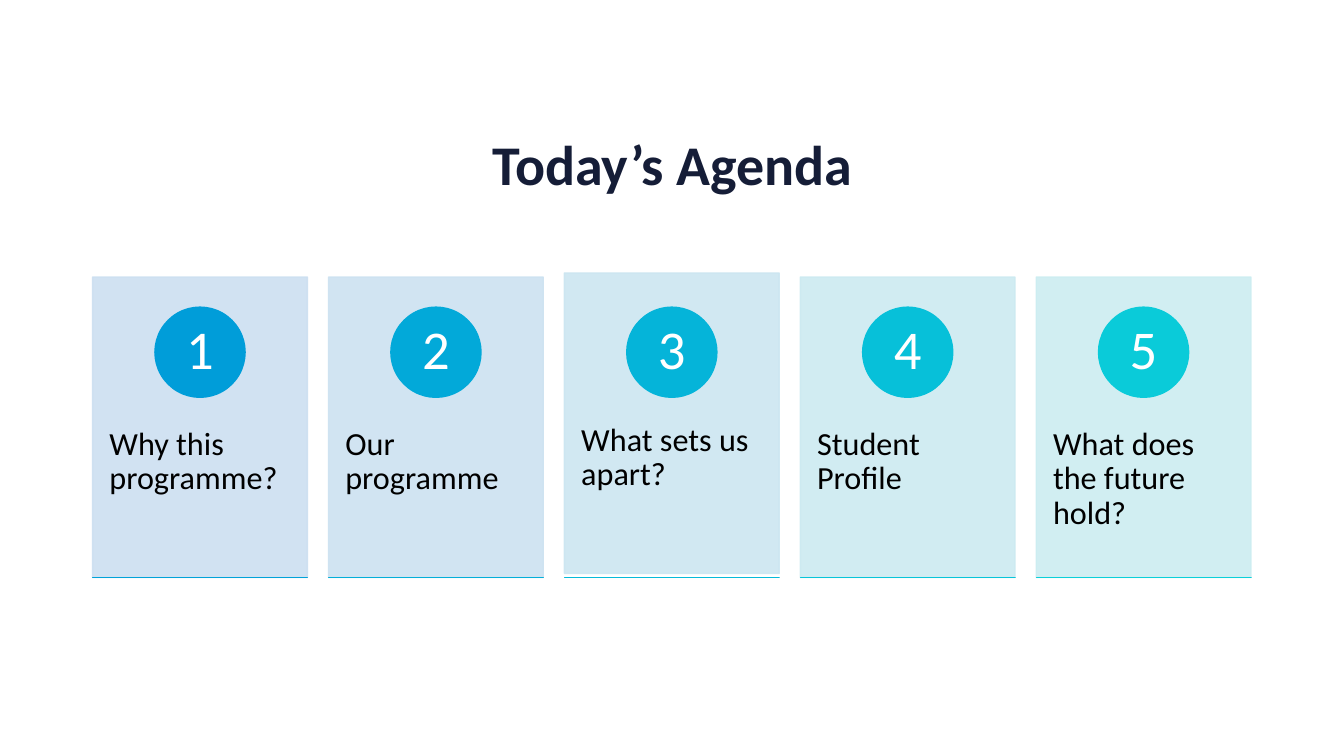
import pptx
import pptx.util
import pptx.dml.color
import pptx.enum.shapes
import pptx.enum.text
import pptx.oxml
from pptx.oxml import ns

Pt = pptx.util.Pt
KIND = pptx.enum.shapes.MSO_SHAPE
ALIGN = pptx.enum.text.PP_ALIGN
ANCHOR = pptx.enum.text.MSO_ANCHOR

HEX = {
    "title": "151D37", "text": "000000", "digit": "FFFFFF",
    "cards": ["CCDFF1", "CCE2F1", "CCE6F1", "CCEAF1", "CCEDF1"],
    "discs": ["009DD9", "02A9D9", "05B4D9", "07C0D9", "0ACBD9"],
    "rules": ["01A3D9", "04AFD9", "06BAD9", "08C5D9", "0BD0D9"],
}
TOPICS = ["Why this programme?", "Our programme", "What sets us apart?",
          "Student Profile", "What does the future hold?"]
LIFTS = [0, 0, 2.9, 0, 0]
GAP = 15.1


def paint(fill, color, alpha=100):
    fill.solid()
    fill.fore_color.rgb = pptx.dml.color.RGBColor.from_string(color)
    if alpha < 100:
        tint = fill._xPr.find(".//" + ns.qn("a:srgbClr"))
        node = pptx.oxml.parse_xml(f'<a:alpha {ns.nsdecls("a")} val="{alpha * 1000}"/>')
        tint.append(node)


def block(slide, kind, box, color, alpha=100):
    """Add a shape whose fill and outline share one colour."""
    shape = slide.shapes.add_shape(kind, *map(Pt, box))
    shape.shadow.inherit = False
    paint(shape.fill, color, alpha)
    paint(shape.line.fill, color, alpha)
    shape.line.width = Pt(1)
    return shape


def write(shape, text, size, color, align, anchor, pads, bold=False, space=0.9):
    """Fill a shape with one run; pads are left, top, right, bottom."""
    frame = shape.text_frame
    frame.word_wrap = True
    frame.vertical_anchor = anchor
    (frame.margin_left, frame.margin_top,
     frame.margin_right, frame.margin_bottom) = map(Pt, pads)
    line = frame.paragraphs[0]
    line.alignment = align
    line.line_spacing = space
    run = line.add_run()
    run.text = text
    run.font.name = "Calibri"
    run.font.size = Pt(size)
    run.font.bold = bold
    run.font.color.rgb = pptx.dml.color.RGBColor.from_string(color)


def head(slide, box):
    title = slide.shapes.title
    title.left, title.top, title.width, title.height = map(Pt, box)
    write(title, "Today’s Agenda", 40, HEX["title"], ALIGN.CENTER,
          ANCHOR.MIDDLE, (7.2, 3.6, 7.2, 3.6), bold=True, space=1.0)


def card(slide, box, item):
    """Draw one numbered card with its base rule."""
    x, y, w, h = box
    size = 64.4
    panel = block(slide, KIND.RECTANGLE, (x, y - LIFTS[item], w, h),
                  HEX["cards"][item], 90)
    write(panel, TOPICS[item], 23, HEX["text"], ALIGN.LEFT, ANCHOR.TOP,
          (12, 107.3, 12, 26))
    disc = block(slide, KIND.OVAL, (x + (w - size) / 2, y + 21.5, size, size),
                 HEX["discs"][item])
    write(disc, str(item + 1), 39, HEX["digit"], ALIGN.CENTER, ANCHOR.MIDDLE,
          (5, 1, 5, 1))
    block(slide, KIND.RECTANGLE, (x, y + h, w, 0), HEX["rules"][item])


def agenda(slide, box):
    x, y, w, h = box
    count = len(TOPICS)
    wide = (w - GAP * (count - 1)) / count
    for item in range(count):
        card(slide, (x + item * (wide + GAP), y, wide, h), item)


def main():
    deck = pptx.Presentation()
    deck.slide_width, deck.slide_height = Pt(960), Pt(540)
    slide = deck.slides.add_slide(deck.slide_layouts[5])
    head(slide, (278.6, 49.7, 403.2, 133.2))
    agenda(slide, (66.2, 197.9, 827.4, 214.6))
    deck.save("out.pptx")


if __name__ == "__main__":
    main()
